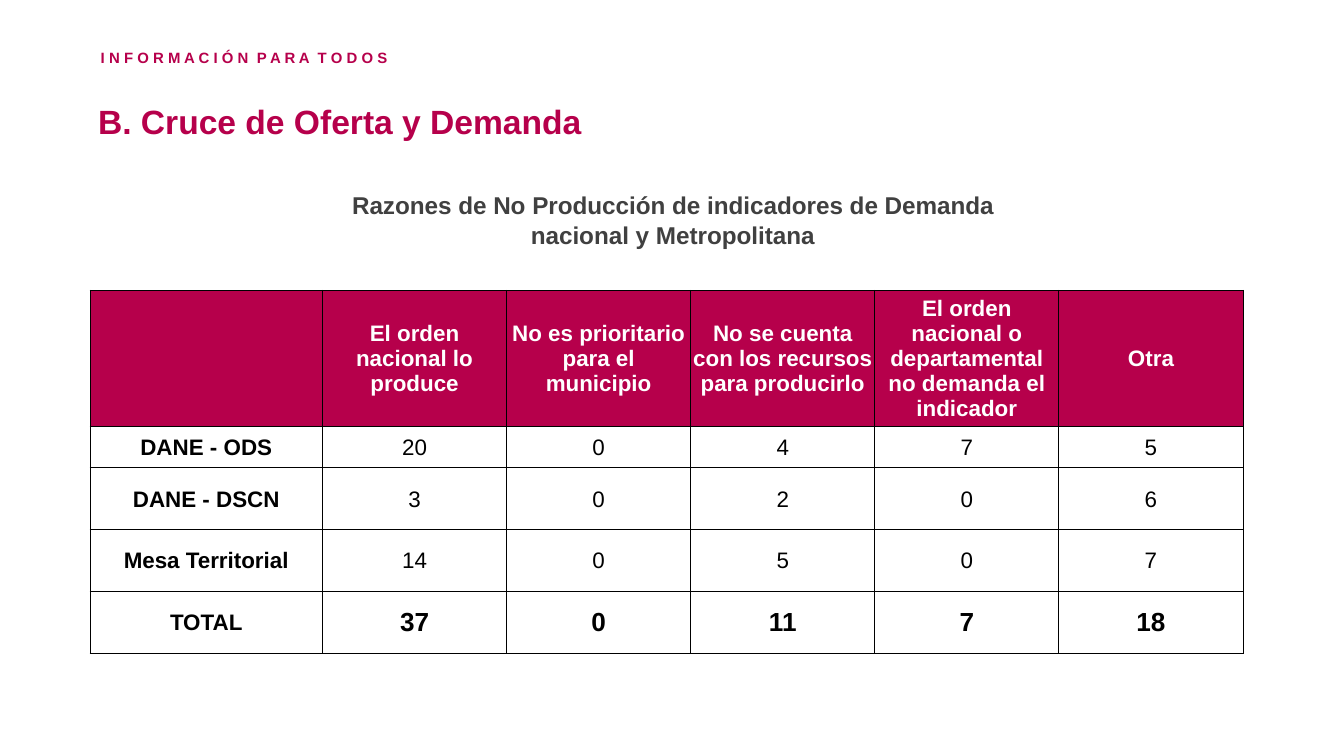
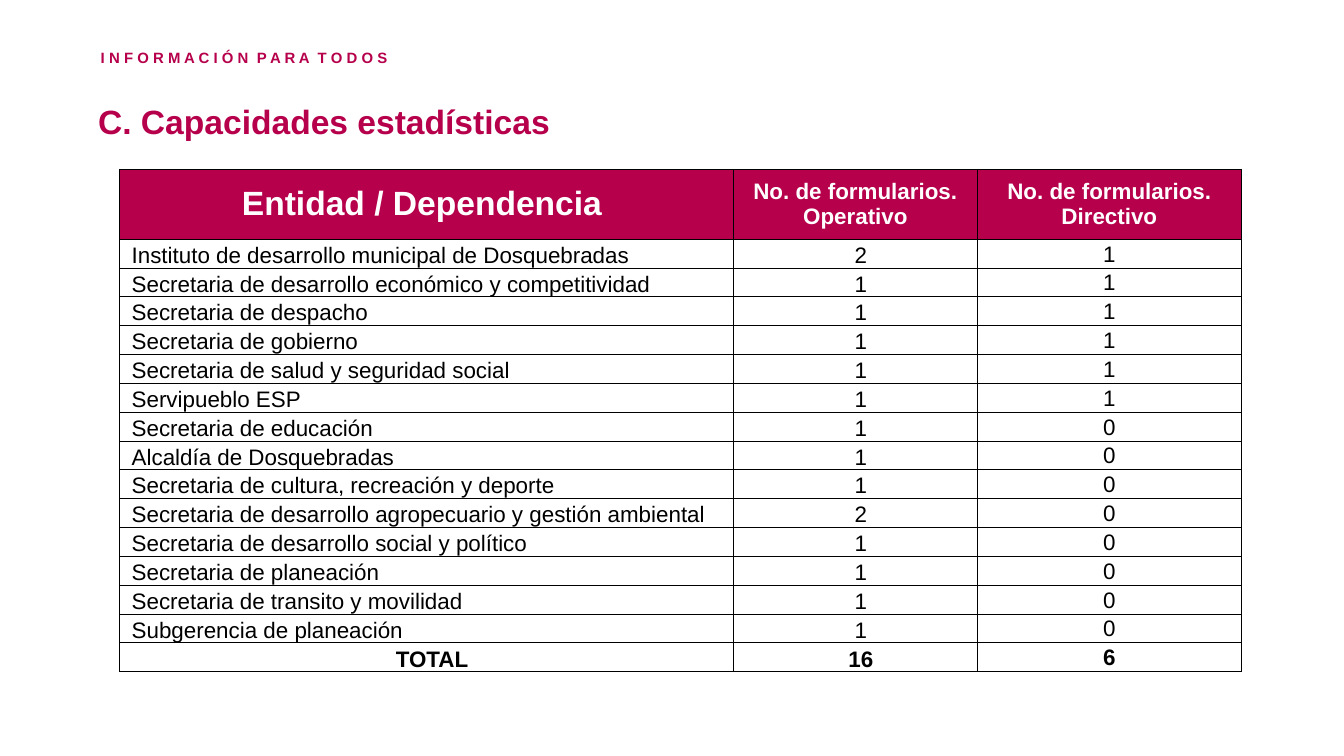
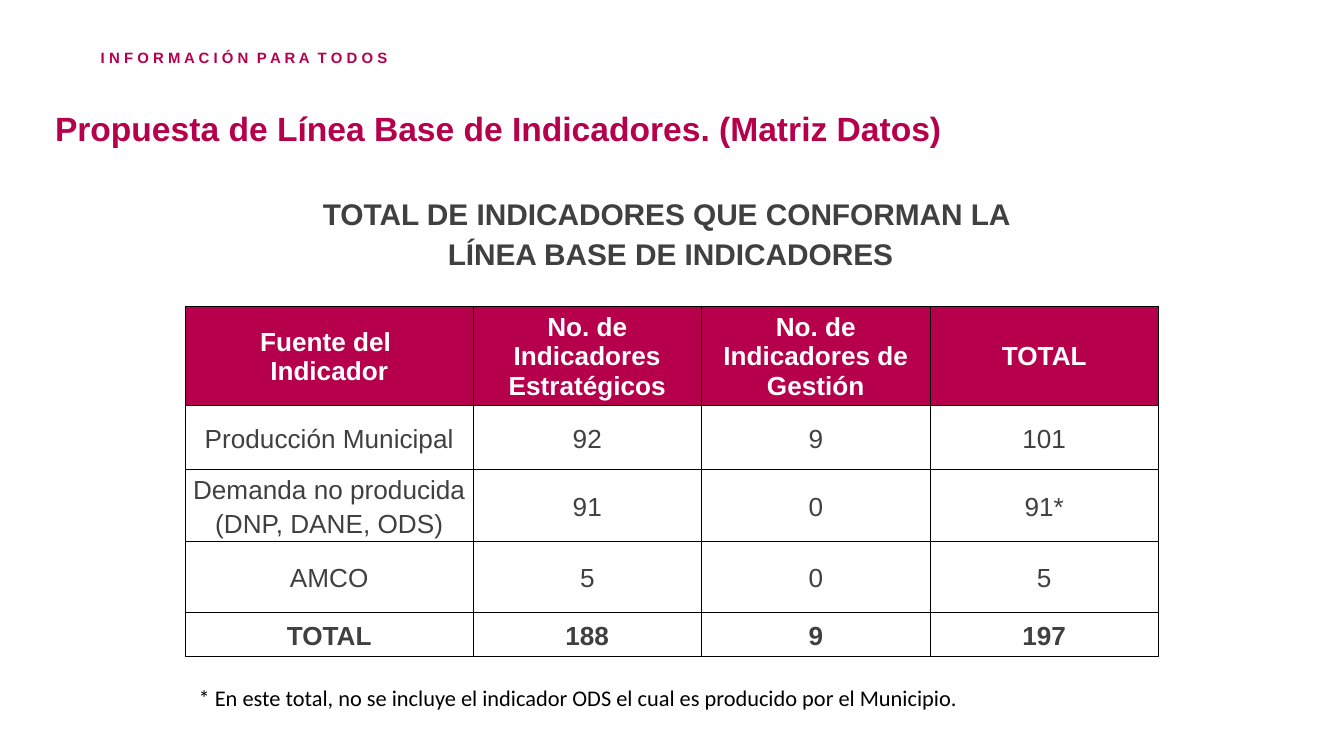
from lxml import etree
from pptx import Presentation
from pptx import util as u
from pptx.dml.color import RGBColor
from pptx.enum import text as t
from pptx.oxml import ns

# Shared look
WINE = RGBColor(0xB6, 0x00, 0x4B)
GREY = RGBColor(0x40, 0x40, 0x40)
BLACK = RGBColor(0, 0, 0)
WHITE = RGBColor(0xFF, 0xFF, 0xFF)
FONT = "Arial"
WIDE = 10
HIGH = WIDE * 9 / 16
LEFT, MID, JUST = t.PP_ALIGN.LEFT, t.PP_ALIGN.CENTER, t.PP_ALIGN.JUSTIFY
CENTER, LOW = t.MSO_ANCHOR.MIDDLE, t.MSO_ANCHOR.BOTTOM
BARE = (0, 0, 0, 0)
THIN = (0.01, 0.01, 0.01, 0)
SIDE = (0.05, 0, 0.05, 0)
DEEP = (0.09, 0.01, 0.01, 0)
BOX = (0.1, 0.05, 0.1, 0.05)

# Content
MOTTO = "I N F O R M A C I Ó N  P A R A  T O D O S"

CROSS = [
    ("", "El orden nacional lo produce", "No es prioritario para el municipio",
     "No se cuenta con los recursos para producirlo",
     "El orden nacional o departamental no demanda el indicador", "Otra"),
    ("DANE - ODS", 20, 0, 4, 7, 5),
    ("DANE - DSCN", 3, 0, 2, 0, 6),
    ("Mesa Territorial", 14, 0, 5, 0, 7),
    ("TOTAL", 37, 0, 11, 7, 18),
]

FORMS = [
    ("Entidad / Dependencia ", "No. de formularios. Operativo",
     "No. de formularios. Directivo"),
    ("Instituto de desarrollo municipal de Dosquebradas", 2, 1),
    ("Secretaria de desarrollo económico y competitividad", 1, 1),
    ("Secretaria de despacho", 1, 1),
    ("Secretaria de gobierno", 1, 1),
    ("Secretaria de salud y seguridad social", 1, 1),
    ("Servipueblo ESP", 1, 1),
    ("Secretaria de educación", 1, 0),
    ("Alcaldía de Dosquebradas", 1, 0),
    ("Secretaria de cultura, recreación y deporte", 1, 0),
    ("Secretaria de desarrollo agropecuario y gestión ambiental", 2, 0),
    ("Secretaria de desarrollo social y político", 1, 0),
    ("Secretaria de planeación", 1, 0),
    ("Secretaria de transito y movilidad", 1, 0),
    ("Subgerencia de planeación", 1, 0),
    ("TOTAL", 16, 6),
]

BASE = [
    ("Fuente del \nIndicador", "No. de Indicadores Estratégicos",
     "No. de Indicadores de Gestión", "TOTAL"),
    ("Producción Municipal", 92, 9, 101),
    ("Demanda no producida\n(DNP, DANE, ODS)", 91, 0, "91*"),
    ("AMCO", 5, 0, 5),
    ("TOTAL", 188, 9, 197),
]


def write(frame, words, size, color, bold=True, align=LEFT, line=None,
          font=FONT):
    """Fill a text frame, one paragraph for each line of words."""
    for i, row in enumerate(words.split("\n")):
        para = frame.add_paragraph() if i else frame.paragraphs[0]
        para.alignment = align
        if line:
            para.line_spacing = line
        run = para.add_run()
        run.text = row
        run.font.name, run.font.size = font, u.Pt(size)
        run.font.bold, run.font.color.rgb = bold, color


def pad(part, sides):
    (part.margin_left, part.margin_top,
     part.margin_right, part.margin_bottom) = map(u.Inches, sides)


def label(slide, area, words, size, color, inset=BARE, **look):
    frame = slide.shapes.add_textbox(*map(u.Inches, area)).text_frame
    frame.word_wrap = True
    pad(frame, inset)
    write(frame, words, size, color, **look)


def edge(cell):
    props = cell._tc.get_or_add_tcPr()
    for side in ("a:lnL", "a:lnR", "a:lnT", "a:lnB"):
        line = etree.SubElement(props, ns.qn(side), w=str(u.Pt(0.5)))
        fill = etree.SubElement(line, ns.qn("a:solidFill"))
        etree.SubElement(fill, ns.qn("a:srgbClr"), val=str(BLACK))


def grid(slide, spot, data, cols, rows, style):
    """Draw a table; style(row, col) gives inset, anchor and text look."""
    table = slide.shapes.add_table(
        len(rows), len(cols), *map(u.Inches, (*spot, sum(cols), sum(rows)))).table
    table.first_row = table.horz_banding = False
    for col, width in zip(table.columns, cols):
        col.width = u.Inches(width)
    for row, height in zip(table.rows, rows):
        row.height = u.Inches(height)
    for r, line in enumerate(data):
        for c, value in enumerate(line):
            cell = table.cell(r, c)
            inset, anchor, look = style(r, c)
            pad(cell, inset)
            cell.vertical_anchor = anchor
            edge(cell)
            if r:
                cell.fill.background()
            else:
                cell.fill.solid()
                cell.fill.fore_color.rgb = WINE
            if value != "":
                write(cell.text_frame, str(value), **{"align": MID, **look})


# Cell rules of each table
def cross(r, c):
    total = r == len(CROSS) - 1
    return THIN, CENTER, dict(size=14 if total and c else 12,
                              color=BLACK if r else WHITE,
                              bold=r == 0 or c == 0 or total)


def forms(r, c):
    if r == 0:
        return BARE, CENTER, dict(size=12 if c else 18, color=WHITE)
    total = r == len(FORMS) - 1
    look = dict(size=12, color=BLACK, bold=total,
                align=MID if c or total else JUST)
    return (THIN, CENTER, look) if c == 2 else (DEEP, LOW, look)


def base(r, c):
    if r == 0:
        return THIN, CENTER, dict(size=14, color=WHITE)
    return SIDE, CENTER, dict(size=14, color=GREY, line=1.15,
                              bold=r == len(BASE) - 1)


def page(deck, title, spot=(0.73, 0.75), size=(6.51, 0.3)):
    """Add a slide with the motto and its title."""
    slide = deck.slides.add_slide(deck.slide_layouts[6])
    label(slide, (0.75, 0.31, 3.07, 0.19), MOTTO, 8, WINE,
          inset=(0, 0.01, 0, 0), align=JUST, line=1.3)
    label(slide, (*spot, *size), title, 18, WINE)
    return slide


def main():
    deck = Presentation()
    deck.slide_width, deck.slide_height = u.Inches(WIDE), u.Inches(HIGH)

    # Supply and demand
    slide = page(deck, "B. Cruce de Oferta y Demanda")
    label(slide, (2.17, 1.37, 5.67, 0.54),
          "Razones de No Producción de indicadores de Demanda nacional y "
          "Metropolitana", 13, GREY, inset=BOX, align=MID)
    grid(slide, (0.67, 2.16), CROSS, [1.73] + [1.37] * 5,
         [1, 0.31] + [0.46] * 3, cross)

    # Statistical capacity
    slide = page(deck, "C. Capacidades estadísticas")
    count = len(FORMS) - 1
    grid(slide, (0.89, 1.26), FORMS, [4.57, 1.81, 1.97],
         [0.52] + [3.22 / count] * count, forms)

    # Baseline of indicators
    slide = page(deck, "Propuesta de Línea Base de Indicadores. (Matriz Datos)",
                 (0.41, 0.8), (7.16, 0.61))
    label(slide, (0.43, 1.43, 9.12, 0.57),
          "TOTAL DE INDICADORES QUE CONFORMAN LA \nLÍNEA BASE DE INDICADORES",
          16, GREY, align=MID, line=u.Pt(21.2))
    grid(slide, (1.38, 2.28), BASE, [2.14] + [1.7] * 3,
         [0.74, 0.47, 0.53, 0.53, 0.33], base)
    label(slide, (1.38, 5.04, 6.9, 0.3),
          "* En este total, no se incluye el indicador ODS el cual es "
          "producido por el Municipio.", 12, BLACK, inset=BOX, bold=False,
          align=JUST, font="Calibri")

    deck.save("out.pptx")


if __name__ == "__main__":
    main()
